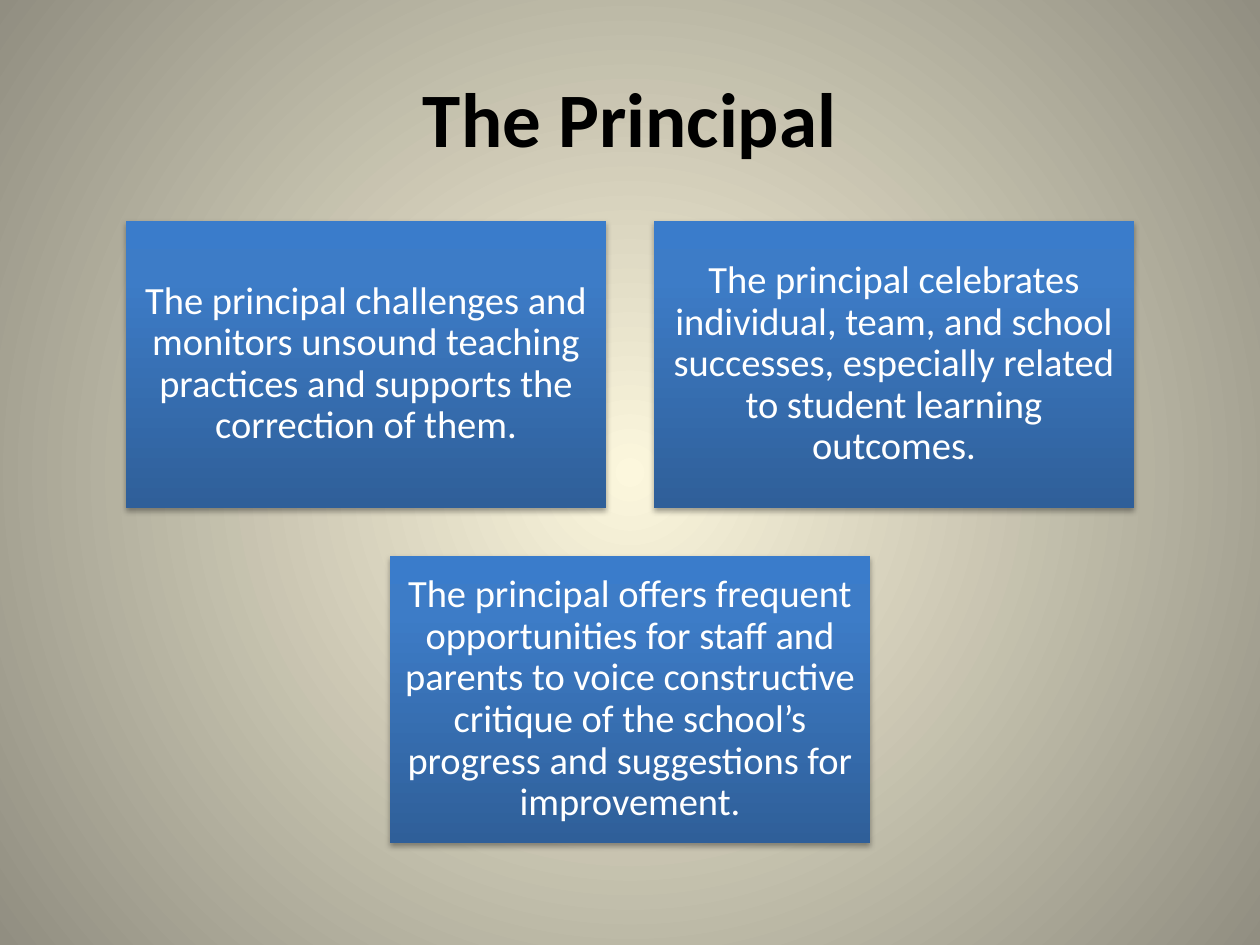
from lxml.etree import SubElement
from pptx import Presentation
from pptx.dml.color import RGBColor
from pptx.enum.shapes import MSO_SHAPE
from pptx.enum.text import MSO_ANCHOR, PP_ALIGN
from pptx.oxml.ns import qn
from pptx.util import Inches, Pt

BLACK = RGBColor(0x00, 0x00, 0x00)
WHITE = RGBColor(0xFF, 0xFF, 0xFF)
CREAM = RGBColor(0xFC, 0xF7, 0xDD)
STONE = RGBColor(0x91, 0x8E, 0x81)
DEEP_BLUE = RGBColor(0x2F, 0x5F, 0x99)
MID_BLUE = RGBColor(0x3D, 0x7C, 0xC7)
BRIGHT_BLUE = RGBColor(0x3A, 0x7C, 0xCB)

TITLE_FONT = {"name": "Calibri", "size": Pt(44), "bold": True}
CARD_FONT = {"name": "Calibri", "size": Pt(22), "bold": False}

CARD_WIDTH, CARD_HEIGHT, CARD_GAP = 3.81, 2.28, 0.38
CARD_ROWS = [
    [
        "The principal challenges and monitors unsound teaching practices "
        "and supports the correction of them.",
        "The principal celebrates individual, team, and school successes, "
        "especially related to student learning outcomes.",
    ],
    [
        "The principal offers frequent opportunities for staff and parents "
        "to voice constructive critique of the school’s progress and "
        "suggestions for improvement.",
    ],
]


def set_gradient(fill, owner, stops, angle=None):
    """Fill with stops of (percent, colour): linear at an angle, else radial."""
    fill.gradient()
    gradient = owner.find(".//" + qn("a:gradFill"))
    gradient.clear()
    gradient.set("rotWithShape", "1")
    stop_list = SubElement(gradient, qn("a:gsLst"))
    for percent, colour in stops:
        stop = SubElement(stop_list, qn("a:gs"), pos=str(percent * 1000))
        SubElement(stop, qn("a:srgbClr"), val=str(colour))
    if angle is None:
        radial = SubElement(gradient, qn("a:path"))
        radial.set("path", "circle")
        centre = dict.fromkeys("ltrb", "50000")
        SubElement(radial, qn("a:fillToRect"), **centre)
    else:
        SubElement(gradient, qn("a:lin"), ang=str(angle * 60000), scaled="0")


def add_drop_shadow(shape):
    shape.shadow.inherit = False
    effects = shape._element.spPr.find(qn("a:effectLst"))
    shadow = SubElement(effects, qn("a:outerShdw"), blurRad=str(Pt(3.1)),
                        dist=str(Pt(1.8)), dir=str(90 * 60000), rotWithShape="0")
    colour = SubElement(shadow, qn("a:srgbClr"), val=str(BLACK))
    SubElement(colour, qn("a:alpha"), val="35000")


def write_text(shape, text, font, colour, inset, line_spacing):
    frame = shape.text_frame
    frame.word_wrap = True
    frame.vertical_anchor = MSO_ANCHOR.MIDDLE
    for side in ("left", "right", "top", "bottom"):
        setattr(frame, f"margin_{side}", Inches(inset))
    para = frame.paragraphs[0]
    para.alignment = PP_ALIGN.CENTER
    para.line_spacing = line_spacing
    span = para.add_run()
    span.text = text
    for name, value in font.items():
        setattr(span.font, name, value)
    span.font.color.rgb = colour


def add_title(page, left, top, width, height):
    box = page.shapes.add_textbox(Inches(left), Inches(top),
                                  Inches(width), Inches(height))
    write_text(box, "The Principal", TITLE_FONT, BLACK, 0.05, 1.0)


def add_card(page, text, left, top):
    card = page.shapes.add_shape(MSO_SHAPE.RECTANGLE, Inches(left), Inches(top),
                                 Inches(CARD_WIDTH), Inches(CARD_HEIGHT))
    stops = [(0, DEEP_BLUE), (80, MID_BLUE), (100, BRIGHT_BLUE)]
    set_gradient(card.fill, card._element, stops, angle=270)
    card.line.fill.background()
    add_drop_shadow(card)
    write_text(card, text, CARD_FONT, WHITE, 0.09, 0.9)


def add_card_rows(page, left, top, width):
    """Stack the rows of cards, each row centred in the width."""
    for row, texts in enumerate(CARD_ROWS):
        row_width = len(texts) * (CARD_WIDTH + CARD_GAP) - CARD_GAP
        row_left = left + (width - row_width) / 2
        row_top = top + row * (CARD_HEIGHT + CARD_GAP)
        for column, text in enumerate(texts):
            add_card(page, text, row_left + column * (CARD_WIDTH + CARD_GAP), row_top)


def main():
    deck = Presentation()
    deck.slide_width, deck.slide_height = Inches(10), Inches(7.5)
    page = deck.slides.add_slide(deck.slide_layouts[6])

    # Background
    set_gradient(page.background.fill, page._element, [(0, CREAM), (100, STONE)])

    # Title and cards
    add_title(page, 0.5, 0.3, 9, 1.25)
    add_card_rows(page, 1, 1.75, 8)

    deck.save("out.pptx")


if __name__ == "__main__":
    main()
